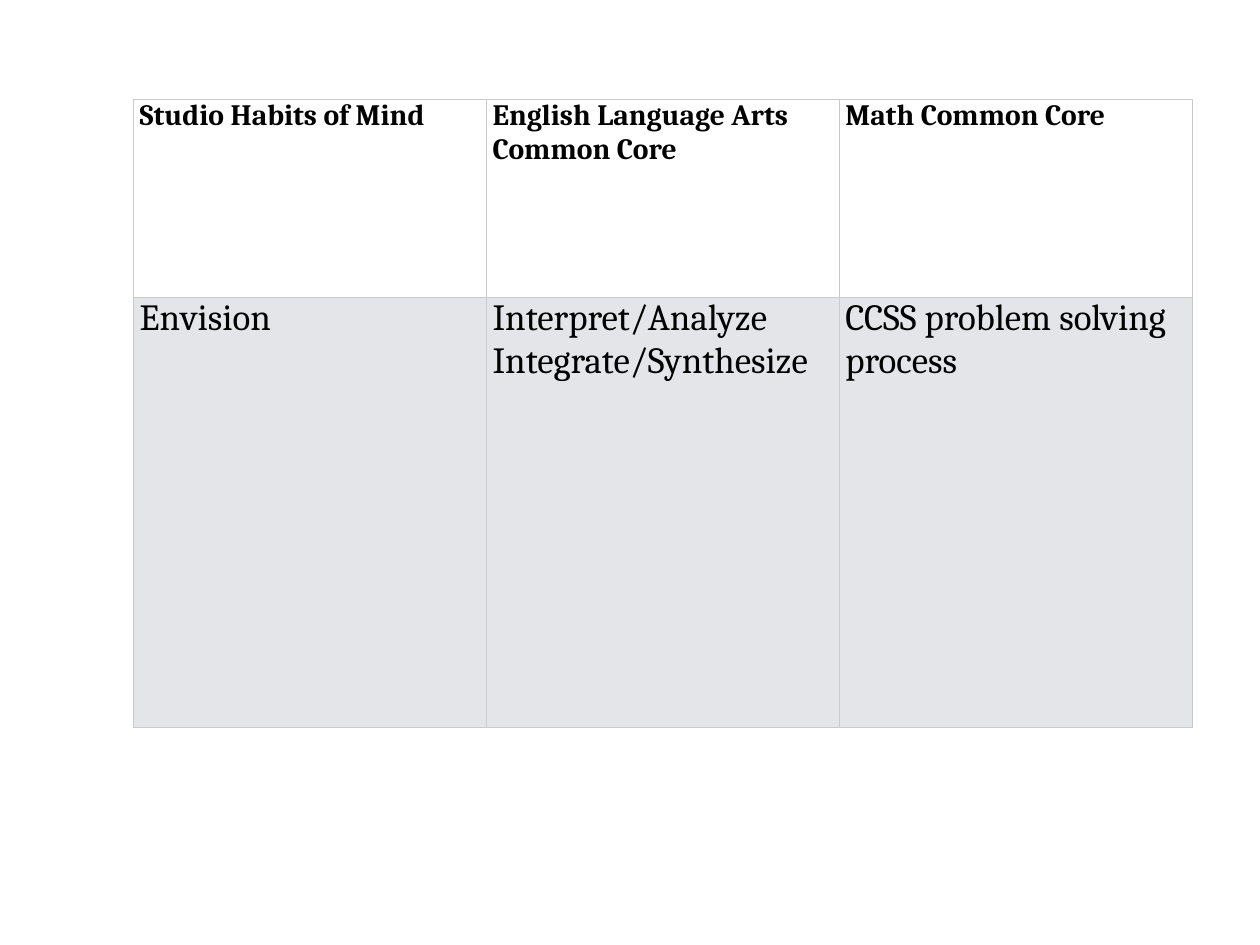
"""Build a slide with a table linking studio habits to the Common Core."""
from dataclasses import dataclass

from lxml.etree import SubElement
from pptx import Presentation
from pptx.dml.color import RGBColor
from pptx.oxml.ns import qn
from pptx.util import Inches, Pt

SLIDE_WIDTH, SLIDE_HEIGHT = Inches(14.22), Inches(10.67)
LEFT, TOP = 0.106, 0.105
COLUMN_SHARE = 0.28
SIDE_MARGIN = Inches(0.07)
BORDER_WIDTH = Pt(0.5)
BLACK = RGBColor(0x00, 0x00, 0x00)
WHITE = RGBColor(0xFF, 0xFF, 0xFF)
PALE_GREY = RGBColor(0xE3, 0xE5, 0xE8)
BORDER_GREY = RGBColor(0xCB, 0xCB, 0xCB)


@dataclass(frozen=True)
class TableRow:
    height_share: float
    size: int
    bold: bool
    fill: RGBColor
    texts: tuple[str, ...]


ROWS = (
    TableRow(0.21, 24, True, WHITE, (
        "Studio Habits of Mind",
        "English Language Arts Common Core",
        "Math Common Core",
    )),
    TableRow(0.455, 30, False, PALE_GREY, (
        "Envision",
        "Interpret/Analyze\nIntegrate/Synthesize",
        "CCSS problem solving process",
    )),
)


def write_text(frame, text: str, *, size: int, bold: bool,
               color: RGBColor = BLACK, font: str = "Cambria") -> None:
    frame.text = text
    for para in frame.paragraphs:
        for span in para.runs:
            span.font.name = font
            span.font.size = Pt(size)
            span.font.bold = bold
            span.font.color.rgb = color


def draw_borders(cell) -> None:
    properties = cell._tc.get_or_add_tcPr()
    for side in ("lnL", "lnR", "lnT", "lnB"):
        line = SubElement(properties, qn(f"a:{side}"), w=str(BORDER_WIDTH))
        fill = SubElement(line, qn("a:solidFill"))
        SubElement(fill, qn("a:srgbClr"), val=str(BORDER_GREY))


def draw_cell(cell, text: str, row: TableRow) -> None:
    cell.margin_left = cell.margin_right = SIDE_MARGIN
    cell.margin_top = cell.margin_bottom = 0
    draw_borders(cell)
    cell.fill.solid()
    cell.fill.fore_color.rgb = row.fill
    write_text(cell.text_frame, text, size=row.size, bold=row.bold)


def draw_table(page, rows: tuple[TableRow, ...]) -> None:
    column_count = len(rows[0].texts)
    column_width = int(COLUMN_SHARE * SLIDE_WIDTH)
    heights = [int(row.height_share * SLIDE_HEIGHT) for row in rows]
    table = page.shapes.add_table(
        len(rows), column_count,
        int(LEFT * SLIDE_WIDTH), int(TOP * SLIDE_HEIGHT),
        column_count * column_width, sum(heights),
    ).table
    table.horz_banding = False
    for column in table.columns:
        column.width = column_width
    for row_index, (row, height) in enumerate(zip(rows, heights)):
        table.rows[row_index].height = height
        for column_index, text in enumerate(row.texts):
            draw_cell(table.cell(row_index, column_index), text, row)


def main() -> None:
    deck = Presentation()
    deck.slide_width, deck.slide_height = SLIDE_WIDTH, SLIDE_HEIGHT
    page = deck.slides.add_slide(deck.slide_layouts[6])
    draw_table(page, ROWS)
    deck.save("out.pptx")


if __name__ == "__main__":
    main()
